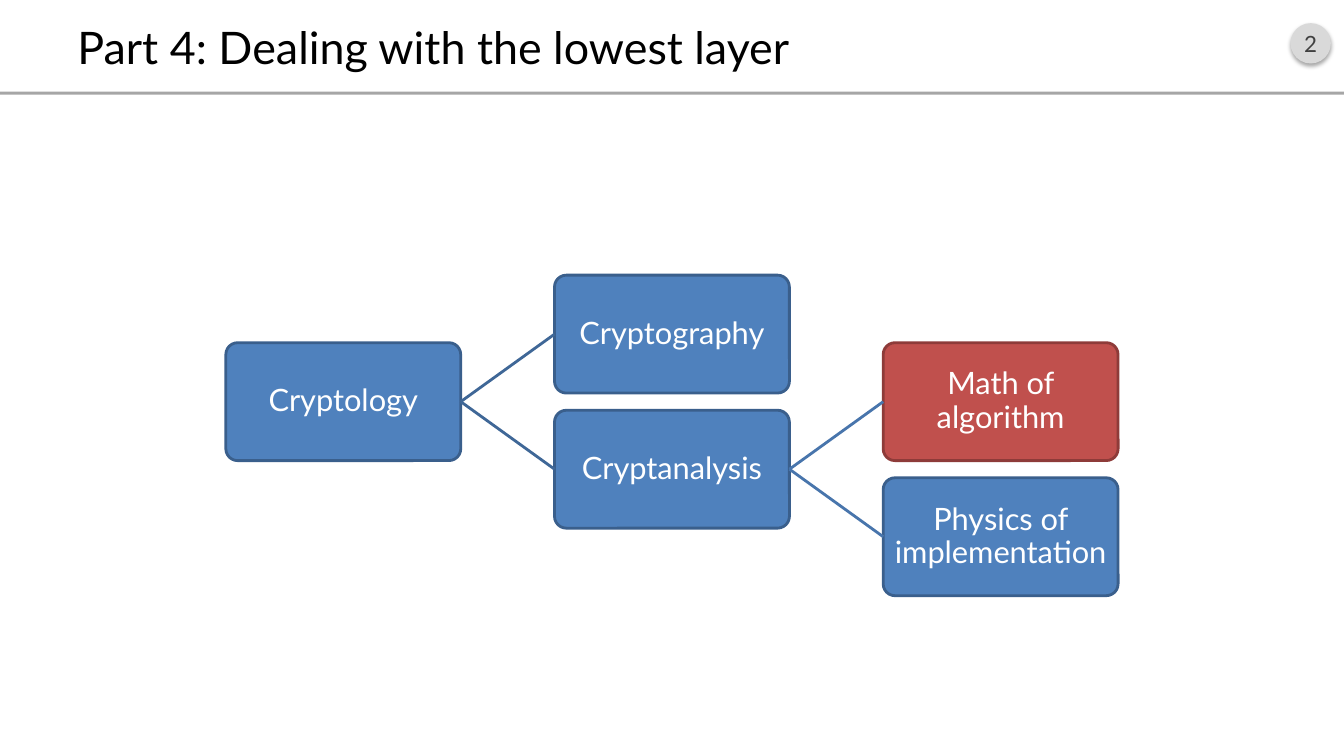
import pptx
import pptx.dml.color
import pptx.enum.shapes
import pptx.enum.text
import pptx.oxml
import pptx.oxml.ns
import pptx.util
from pptx.util import Inches

FONT = "Lato"
SLIDE_WIDTH, SLIDE_HEIGHT = 13.33, 7.5
NODE_WIDTH, NODE_HEIGHT = 2.33, 1.17
COLUMN_STEP, HALF_ROW = 3.26, 0.67
BLUE, BLUE_EDGE = "4F81BD", "3A5F8C"
RED, RED_EDGE = "C0504D", "8E3B39"

# label, column, half rows below the first row, fill, edge
NODES = [
    ("Cryptology", 0, 1, BLUE, BLUE_EDGE),
    ("Cryptography", 1, 0, BLUE, BLUE_EDGE),
    ("Cryptanalysis", 1, 2, BLUE, BLUE_EDGE),
    ("Math of algorithm", 2, 1, RED, RED_EDGE),
    ("Physics of implementation", 2, 3, BLUE, BLUE_EDGE),
]
BRANCHES = [
    ("Cryptology", "Cryptography", "3F6797"),
    ("Cryptology", "Cryptanalysis", "3F6797"),
    ("Cryptanalysis", "Math of algorithm", "4875AC"),
    ("Cryptanalysis", "Physics of implementation", "4875AC"),
]


def color(value):
    return pptx.dml.color.RGBColor.from_string(value)


def write(shape, text, size, text_color, align, inset_x, inset_y):
    """Put one vertically centred paragraph into the shape and return it."""
    frame = shape.text_frame
    frame.text = text
    frame.word_wrap = True
    frame.vertical_anchor = pptx.enum.text.MSO_ANCHOR.MIDDLE
    frame.margin_left = frame.margin_right = Inches(inset_x)
    frame.margin_top = frame.margin_bottom = Inches(inset_y)
    paragraph = frame.paragraphs[0]
    paragraph.alignment = align
    font = paragraph.runs[0].font
    font.name = FONT
    font.size = pptx.util.Pt(size)
    font.color.rgb = color(text_color)
    return paragraph


def add_filled(slide, kind, left, top, width, height, fill):
    shape = slide.shapes.add_shape(
        kind, Inches(left), Inches(top), Inches(width), Inches(height))
    shape.shadow.inherit = False
    shape.fill.solid()
    shape.fill.fore_color.rgb = color(fill)
    shape.line.fill.background()
    return shape


def add_soft_shadow(shape):
    effects = shape._element.spPr.find(pptx.oxml.ns.qn("a:effectLst"))
    effects.append(pptx.oxml.parse_xml(
        f'<a:outerShdw {pptx.oxml.ns.nsdecls("a")} blurRad="39370" dist="22860" '
        'dir="5400000" rotWithShape="0"><a:srgbClr val="000000">'
        '<a:alpha val="35000"/></a:srgbClr></a:outerShdw>'))


def add_header(slide, left, top, width, height, title, number):
    shapes = pptx.enum.shapes.MSO_SHAPE
    align = pptx.enum.text.PP_ALIGN
    badge = add_filled(slide, shapes.OVAL, left + width - 0.53, top + 0.23,
                       0.4, 0.4, "D9D9D9")
    add_soft_shadow(badge)
    write(badge, number, 16, "404040", align.CENTER, 0, 0.05)
    add_filled(slide, shapes.RECTANGLE, left, top + height - 0.03, width, 0.03, "A6A6A6")
    title_box = slide.shapes.add_textbox(
        Inches(left + 0.67), Inches(top + 0.16), Inches(12), Inches(0.6))
    write(title_box, title, 32, "000000", align.LEFT, 0.1, 0.05)


def add_node(slide, left, top, label, fill, edge):
    node = add_filled(slide, pptx.enum.shapes.MSO_SHAPE.ROUNDED_RECTANGLE,
                      left, top, NODE_WIDTH, NODE_HEIGHT, fill)
    node.adjustments[0] = 0.1
    node.line.color.rgb = color(edge)
    node.line.width = pptx.util.Pt(2)
    paragraph = write(node, label, 22, "FFFFFF",
                      pptx.enum.text.PP_ALIGN.CENTER, 0.02, 0.02)
    paragraph.line_spacing = 0.9
    return node


def add_branch(slide, parent, child, line_color):
    """Join the parent's right side to the child's left side."""
    branch = slide.shapes.add_connector(
        pptx.enum.shapes.MSO_CONNECTOR.STRAIGHT, 0, 0, 0, 0)
    branch.begin_connect(parent, 3)
    branch.end_connect(child, 1)
    branch.line.color.rgb = color(line_color)
    branch.line.width = pptx.util.Pt(2)
    branch._element.spPr.append(pptx.oxml.parse_xml(
        f'<a:effectLst {pptx.oxml.ns.nsdecls("a")}/>'))


def add_tree(slide, left, top):
    nodes = {
        label: add_node(slide, left + column * COLUMN_STEP,
                        top + half_rows * HALF_ROW, label, fill, edge)
        for label, column, half_rows, fill, edge in NODES
    }
    for parent, child, line_color in BRANCHES:
        add_branch(slide, nodes[parent], nodes[child], line_color)


def main():
    presentation = pptx.Presentation()
    presentation.slide_width = Inches(SLIDE_WIDTH)
    presentation.slide_height = Inches(SLIDE_HEIGHT)
    slide = presentation.slides.add_slide(presentation.slide_layouts[6])
    add_header(slide, 0, 0, SLIDE_WIDTH, 0.94, "Part 4: Dealing with the lowest layer", "2")
    add_tree(slide, 2.24, 2.73)
    presentation.save("out.pptx")


if __name__ == "__main__":
    main()
